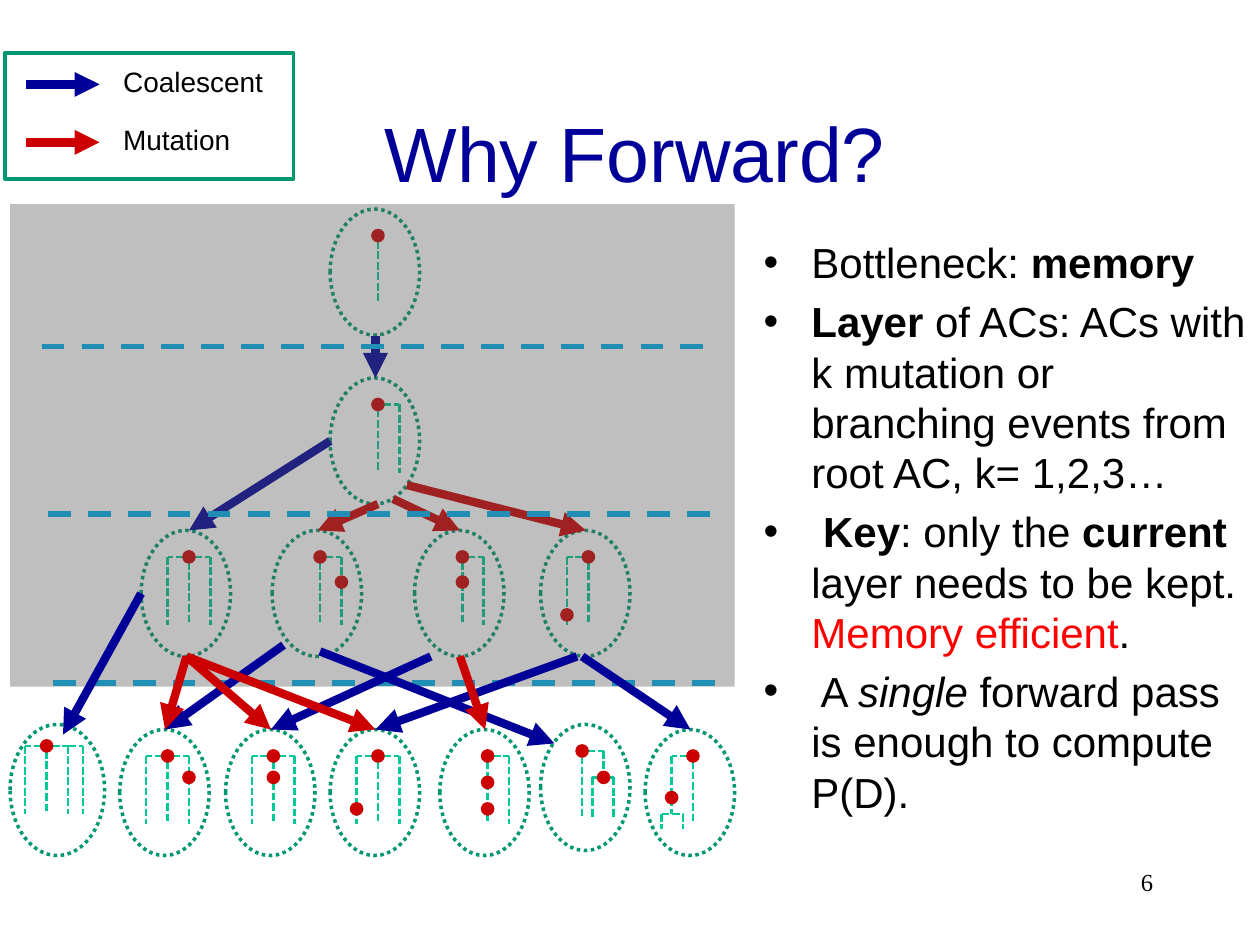
import pptx
import pptx.dml.color
import pptx.enum.dml
import pptx.enum.shapes
import pptx.enum.text
import pptx.oxml.ns
import pptx.oxml.xmlchemy
import pptx.util

COLORS = {
    "coalescent": "000099", "mutation": "CC0000", "lineage": "00C896",
    "outline": "009771", "layer": "00B0F0", "shade": "595959",
    "text": "000000", "highlight": "FF0000",
}
Inches = pptx.util.Inches
DASH = pptx.enum.dml.MSO_LINE
SHAPE = pptx.enum.shapes.MSO_SHAPE
ALIGN = pptx.enum.text.PP_ALIGN
AUTO_SIZE = pptx.enum.text.MSO_AUTO_SIZE

# Lineage segments (x1, y1, x2, y2), measured from the root mutation
STEM = [(0, 0.04, 0, 0.54)]
LEFT = [(-0.17, 0, -0.17, 0.54), (-0.04, 0, -0.17, 0)]
RIGHT = [(0.17, 0, 0.17, 0.54), (0.04, 0, 0.17, 0)]
FAR_RIGHT = [(0.29, 0, 0.29, 0.54), (0.17, 0, 0.29, 0)]
FORK_RIGHT = [(0.17, 0, 0.17, 0.25), (0.04, 0, 0.17, 0),
              (0.08, 0.21, 0.08, 0.54), (0.25, 0.21, 0.25, 0.54),
              (0.2, 0.21, 0.25, 0.21), (0.08, 0.21, 0.12, 0.21)]
FORK_LEFT = [(-0.17, 0, -0.17, 0.46), (-0.04, 0, -0.17, 0),
             (-0.25, 0.46, -0.08, 0.46), (-0.25, 0.46, -0.25, 0.58),
             (-0.08, 0.46, -0.08, 0.58)]

# Root position, lineages, further mutations measured from the root
UPPER_CONFIGURATIONS = [
    (3, 1.87, STEM, []),
    (3, 3.21, STEM + RIGHT, []),
    (1.5, 4.42, STEM + LEFT + RIGHT, []),
    (2.54, 4.42, STEM + RIGHT, [(0.17, 0.2)]),
    (3.67, 4.42, STEM + RIGHT, [(0, 0.2)]),
    (4.67, 4.42, STEM + LEFT, [(-0.17, 0.46)]),
]
BOTTOM_CONFIGURATIONS = [
    (1.33, 6, STEM + LEFT + RIGHT, [(0.17, 0.17)]),
    (2.17, 6, STEM + LEFT + RIGHT, [(0, 0.17)]),
    (3, 6, STEM + LEFT + RIGHT, [(-0.17, 0.42)]),
    (3.87, 6, STEM + RIGHT, [(0, 0.21), (0, 0.42)]),
    (5.5, 6, STEM + FORK_LEFT, [(-0.17, 0.33)]),
]
UPPER_EVENTS = [
    ("coalescent", 2.98, 2.67, 2.98, 3),
    ("coalescent", 2.62, 3.5, 1.5, 4.21),
    ("mutation", 3, 4, 2.52, 4.21),
    ("mutation", 3.12, 3.96, 3.65, 4.21),
    ("mutation", 3.23, 3.85, 4.65, 4.21),
]
BOTTOM_EVENTS = [
    ("coalescent", 1.12, 4.71, 0.5, 5.83),
    ("coalescent", 2.54, 5.17, 4.4, 5.9),
    ("coalescent", 2.25, 5.12, 1.31, 5.79),
    ("coalescent", 3.42, 5.21, 2.15, 5.79),
    ("coalescent", 4.58, 5.21, 2.98, 5.79),
    ("mutation", 1.48, 5.21, 1.31, 5.79),
    ("mutation", 1.48, 5.21, 2.15, 5.79),
    ("mutation", 1.48, 5.21, 2.98, 5.79),
    ("mutation", 3.65, 5.21, 3.85, 5.79),
    ("coalescent", 4.62, 5.21, 5.48, 5.79),
]
# Each run is its text, its style and its colour
BULLETS = [
    [("Bottleneck: ", "", "text"), ("memory", "bold", "text")],
    [("Layer", "bold", "text"),
     (" of ACs: ACs with k mutation or branching events from root AC, k= 1,2,3…", "", "text")],
    [(" ", "", "text"), ("Key", "bold", "text"), (": only the ", "", "text"),
     ("current", "bold", "text"), (" layer needs to be kept. ", "", "text"),
     ("Memory efficient", "", "highlight"), (".", "", "text")],
    [(" A ", "", "text"), ("single", "italic", "text"),
     (" forward pass is enough to compute P(D).", "", "text")],
]


def rgb(name):
    return pptx.dml.color.RGBColor.from_string(COLORS[name])


def append_element(parent, tag, **attributes):
    element = pptx.oxml.xmlchemy.OxmlElement(tag)
    for name, value in attributes.items():
        element.set(name, value)
    parent.append(element)


def place(shape, left, top, width, height):
    shape.left, shape.top = Inches(left), Inches(top)
    shape.width, shape.height = Inches(width), Inches(height)


def add_run(paragraph, text, size, color="text", font="Arial", style=""):
    run = paragraph.add_run()
    run.text = text
    run.font.size = pptx.util.Pt(size)
    run.font.name = font
    run.font.color.rgb = rgb(color)
    run.font.bold = style == "bold"
    run.font.italic = style == "italic"


def set_line(line, color, width, dash=None):
    line.color.rgb = rgb(color)
    line.width = pptx.util.Pt(width)
    if dash is not None:
        line.dash_style = dash


def add_line(slide, ends, color, width, dash=None):
    connector = slide.shapes.add_connector(
        pptx.enum.shapes.MSO_CONNECTOR.STRAIGHT, *map(Inches, ends))
    set_line(connector.line, color, width, dash)
    append_element(connector._element.spPr, "a:effectLst")
    return connector


def add_event(slide, kind, *ends):
    """Draw an arrow for one coalescent or mutation event."""
    connector = add_line(slide, ends, kind, 4.75)
    line = connector._element.spPr.find(pptx.oxml.ns.qn("a:ln"))
    append_element(line, "a:tailEnd", type="triangle")


def add_outline(slide, preset, box, color, dash=None, fill=None):
    shape = slide.shapes.add_shape(preset, *map(Inches, box))
    shape.shadow.inherit = False
    set_line(shape.line, color, 2, dash)
    if fill:
        shape.fill.solid()
        shape.fill.fore_color.rgb = rgb(fill)
    else:
        shape.fill.background()


def add_configuration(slide, x, y, lineages, mutations, oval=(-0.38, -0.21, 0.71, 1)):
    """Draw an ancestral configuration whose root mutation is at x, y."""
    for x1, y1, x2, y2 in lineages:
        add_line(slide, (x + x1, y + y1, x + x2, y + y2), "lineage", 1.5, DASH.SQUARE_DOT)
    for dx, dy in [(0, 0)] + mutations:
        box = (x + dx - 0.04, y + dy - 0.04, 0.08, 0.08)
        add_outline(slide, SHAPE.OVAL, box, "mutation", fill="mutation")
    left, top, width, height = oval
    add_outline(slide, SHAPE.OVAL, (x + left, y + top, width, height), "outline", DASH.ROUND_DOT)


def add_label(slide, box, text, size, font="Arial", align=ALIGN.LEFT):
    frame = slide.shapes.add_textbox(*map(Inches, box)).text_frame
    frame.word_wrap = True
    frame.paragraphs[0].alignment = align
    add_run(frame.paragraphs[0], text, size, font=font)


def add_legend(slide):
    for y, kind, name in [(0.67, "coalescent", "Coalescent"), (1.13, "mutation", "Mutation")]:
        add_event(slide, kind, 0.21, y, 0.79, y)
        add_label(slide, (0.88, y - 0.21, 1.46, 0.37), name, 16)
    add_outline(slide, SHAPE.RECTANGLE, (0.04, 0.42, 2.29, 1), "outline")


def add_shade(slide):
    shape = slide.shapes.add_shape(SHAPE.RECTANGLE, *map(Inches, (0.08, 1.62, 5.75, 3.83)))
    shape.shadow.inherit = False
    shape.line.fill.background()
    shape.fill.solid()
    shape.fill.fore_color.rgb = rgb("shade")
    color = shape._element.spPr.find(".//" + pptx.oxml.ns.qn("a:srgbClr"))
    append_element(color, "a:alpha", val="38000")


def fill_title(title):
    place(title, 0.25, 0.58, 9.58, 1.25)
    paragraph = title.text_frame.paragraphs[0]
    paragraph.alignment = ALIGN.CENTER
    add_run(paragraph, "Why Forward?", 44, "coalescent")


def fill_body(body):
    place(body, 5.96, 1.83, 4.04, 5)
    frame = body.text_frame
    frame.auto_size = AUTO_SIZE.NONE
    for index, runs in enumerate(BULLETS):
        paragraph = frame.add_paragraph() if index else frame.paragraphs[0]
        paragraph.space_before = pptx.util.Pt(4.8)
        properties = paragraph._p.get_or_add_pPr()
        properties.set("marL", str(Inches(0.38)))
        properties.set("indent", str(Inches(-0.38)))
        for text, style, color in runs:
            add_run(paragraph, text, 24, color, style=style)


def main():
    presentation = pptx.Presentation()
    presentation.slide_width, presentation.slide_height = Inches(10), Inches(7.5)
    slide = presentation.slides.add_slide(presentation.slide_layouts[1])
    fill_title(slide.shapes.title)
    fill_body(slide.placeholders[1])
    add_label(slide, (7.17, 6.83, 2.08, 0.5), "6", 14, "Times New Roman", ALIGN.RIGHT)

    for configuration in UPPER_CONFIGURATIONS:
        add_configuration(slide, *configuration)
    for event in UPPER_EVENTS:
        add_event(slide, *event)
    for x, y in [(0.33, 2.75), (0.38, 4.08), (0.42, 5.42)]:
        add_line(slide, (x, y, x + 5.29, y), "layer", 3.25, DASH.DASH)
    add_legend(slide)
    add_shade(slide)

    add_configuration(slide, 0.37, 5.92, STEM + LEFT + RIGHT + FAR_RIGHT, [],
                      oval=(-0.29, -0.17, 0.75, 1.04))
    add_configuration(slide, 4.62, 5.96, STEM + FORK_RIGHT, [(0.17, 0.21)],
                      oval=(-0.33, -0.21, 0.71, 1))
    for configuration in BOTTOM_CONFIGURATIONS:
        add_configuration(slide, *configuration)
    for event in BOTTOM_EVENTS:
        add_event(slide, *event)
    presentation.save("out.pptx")


if __name__ == "__main__":
    main()
